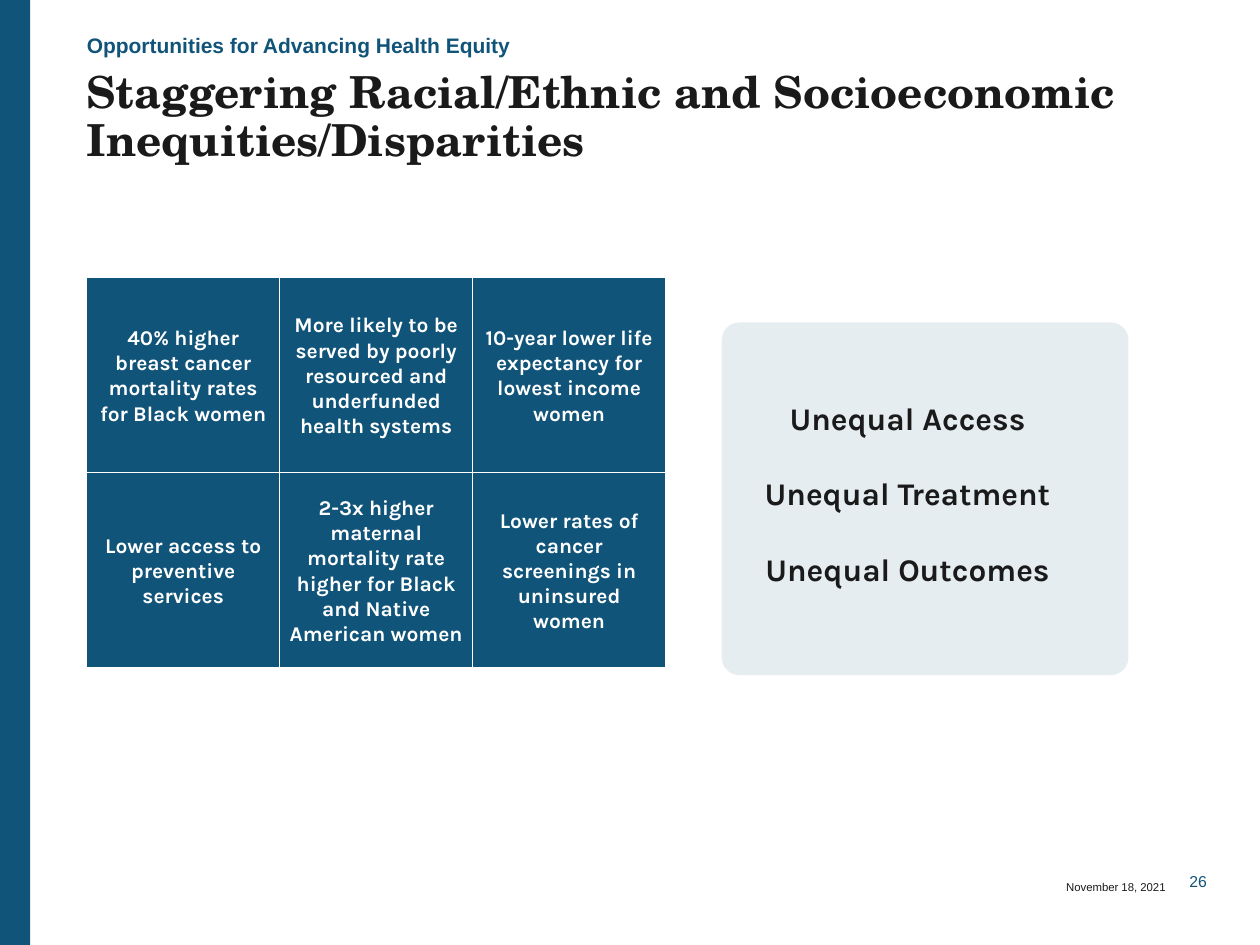
import pptx
import pptx.dml.color
import pptx.enum.shapes
import pptx.enum.text
import pptx.oxml.ns
import pptx.util
from lxml import etree

Cm = pptx.util.Cm
Pt = pptx.util.Pt
Align = pptx.enum.text.PP_ALIGN
Anchor = pptx.enum.text.MSO_ANCHOR
Shape = pptx.enum.shapes.MSO_SHAPE

BLUE, INK, WHITE = "115479", "1A1A1A", "FFFFFF"
SLIDE_WIDTH, SLIDE_HEIGHT = 25.4, 19.05
TIGHT = (0, 0)
SNUG = (0.18, 0.09)

DISPARITIES = [
    ["40% higher breast cancer mortality rates for Black women",
     "More likely to be served by poorly resourced and underfunded health systems",
     "10-year lower life expectancy for lowest income women"],
    ["Lower access to preventive services",
     "2-3x higher maternal mortality rate higher for Black and Native American women",
     "Lower rates of cancer screenings in uninsured women"],
]
CONSEQUENCES = ["Unequal Access", "Unequal Treatment", "Unequal Outcomes"]


def rgb(code):
    return pptx.dml.color.RGBColor.from_string(code)


def apply(target, values):
    for name, value in values.items():
        setattr(target, name, value)


def write(frame, lines, font, color, align=Align.LEFT, anchor=Anchor.TOP,
          insets=TIGHT, wrap=True, gap=0, line_spacing=1.0):
    """Fill a text frame, one paragraph a line, with gap points between them."""
    across, down = map(Cm, insets)
    apply(frame, {"word_wrap": wrap, "vertical_anchor": anchor,
                  "margin_left": across, "margin_right": across,
                  "margin_top": down, "margin_bottom": down})
    for index, line in enumerate(lines):
        paragraph = frame.paragraphs[0] if index == 0 else frame.add_paragraph()
        apply(paragraph, {"alignment": align, "line_spacing": line_spacing,
                          "space_before": Pt(gap if index else 0)})
        run = paragraph.add_run()
        run.text = line
        apply(run.font, font)
        run.font.color.rgb = rgb(color)


def add_text(slide, box, lines, font, color, **layout):
    textbox = slide.shapes.add_textbox(*map(Cm, box))
    write(textbox.text_frame, lines, font, color, **layout)


def add_block(slide, kind, box, fill, outline=None):
    block = slide.shapes.add_shape(kind, *map(Cm, box))
    block.shadow.inherit = False
    block.fill.solid()
    block.fill.fore_color.rgb = rgb(fill)
    if outline:
        block.line.color.rgb = rgb(outline)
        block.line.width = Pt(0.75)
    else:
        block.line.fill.background()
    return block


def set_opacity(block, percent):
    color = block.fill._xPr.find(".//" + pptx.oxml.ns.qn("a:srgbClr"))
    alpha = etree.SubElement(color, pptx.oxml.ns.qn("a:alpha"))
    alpha.set("val", str(percent * 1000))


def add_heading(slide, box):
    left, top, width, height = box
    add_text(slide, (left, top, width, 0.69),
             ["Opportunities for Advancing Health Equity"],
             {"name": "Arial", "size": Pt(12), "bold": True}, BLUE,
             anchor=Anchor.BOTTOM)
    title_offset = 0.94
    add_text(slide, (left, top + title_offset, width, height - title_offset),
             ["Staggering Racial/Ethnic and Socioeconomic Inequities/Disparities"],
             {"name": "TeX Gyre Schola", "size": Pt(25.2), "bold": True}, INK,
             line_spacing=0.9)


def add_disparity_grid(slide, box):
    left, top, width, height = box
    cell_height = height / len(DISPARITIES)
    for row, findings in enumerate(DISPARITIES):
        cell_width = width / len(findings)
        for column, finding in enumerate(findings):
            cell = add_block(slide, Shape.RECTANGLE,
                             (left + column * cell_width, top + row * cell_height,
                              cell_width, cell_height), BLUE, WHITE)
            write(cell.text_frame, [finding],
                  {"name": "Karla", "size": Pt(12), "bold": True}, WHITE,
                  align=Align.CENTER, anchor=Anchor.MIDDLE, insets=SNUG)


def add_consequences(slide, box):
    left, top, width, height = box
    panel = add_block(slide, Shape.ROUNDED_RECTANGLE, box, BLUE)
    panel.adjustments[0] = 0.05
    set_opacity(panel, 10)
    add_text(slide, (left + 0.41, top + 1.45, width - 1.53, height - 2.87),
             CONSEQUENCES, {"name": "Karla", "size": Pt(18), "bold": True}, INK,
             align=Align.CENTER, insets=SNUG, gap=21.6)


def add_footer(slide, box):
    left, top, width, height = box
    add_text(slide, (left, top + 0.13, width - 0.58, height - 0.13),
             ["November 18, 2021"], {"name": "Arial", "size": Pt(6.5)}, INK,
             align=Align.RIGHT, insets=(0.25, 0.13))
    number_width = 0.79
    add_text(slide, (left + width - number_width, top, number_width, 0.56),
             ["26"], {"name": "Arial", "size": Pt(9)}, BLUE,
             align=Align.RIGHT, anchor=Anchor.MIDDLE, wrap=False)


def main():
    deck = pptx.Presentation()
    apply(deck, {"slide_width": Cm(SLIDE_WIDTH), "slide_height": Cm(SLIDE_HEIGHT)})
    slide = deck.slides.add_slide(deck.slide_layouts[6])
    add_block(slide, Shape.RECTANGLE, (0, 0, 0.61, SLIDE_HEIGHT), BLUE)
    add_heading(slide, (1.75, 0.48, 22.48, 2.97))
    add_disparity_grid(slide, (1.75, 5.59, 11.67, 7.87))
    add_consequences(slide, (14.55, 6.5, 8.2, 7.11))
    add_footer(slide, (15.16, 17.48, 9.17, 0.89))
    deck.save("out.pptx")


if __name__ == "__main__":
    main()
